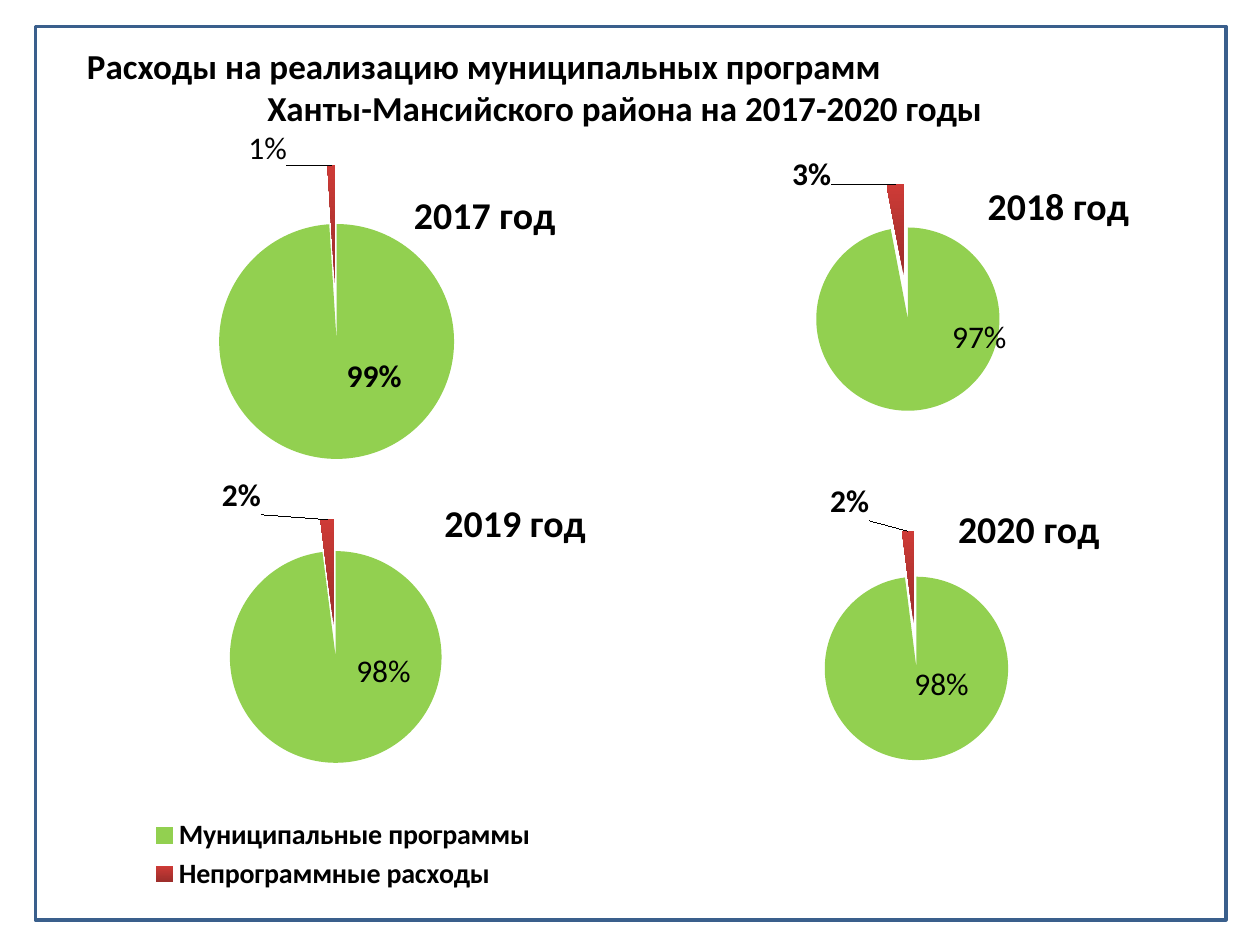
from dataclasses import dataclass

from lxml.etree import SubElement
from pptx import Presentation
from pptx.chart.data import CategoryChartData
from pptx.dml.color import RGBColor
from pptx.enum.chart import XL_CHART_TYPE, XL_LABEL_POSITION, XL_LEGEND_POSITION
from pptx.enum.shapes import MSO_SHAPE
from pptx.enum.text import MSO_ANCHOR, PP_ALIGN
from pptx.oxml.ns import qn
from pptx.util import Inches, Pt


@dataclass(frozen=True)
class Theme:
    font: str = "Calibri"
    ink: str = "000000"
    border: str = "3A5F8C"
    program: str = "92D050"
    other_dark: str = "9B2D2A"
    other_light: str = "CE3B37"
    heading_size: float = 20
    chart_title_size: float = 21.6
    label_size: float = 18
    legend_size: float = 16


@dataclass(frozen=True)
class YearPie:
    year: int
    shares: tuple
    area: tuple
    plot: tuple
    title_at: tuple
    label_shifts: tuple
    bold_labels: tuple = (False, True)
    explosion: int = 25
    legend: tuple = ()


CATEGORIES = ("Муниципальные программы", "Непрограммные расходы")
HEADING = (
    ("Расходы на реализацию муниципальных программ", PP_ALIGN.LEFT),
    ("Ханты-Мансийского района на 2017-2020 годы", PP_ALIGN.CENTER),
)
PIES = (
    YearPie(2017, (99, 1), (10.6, 8.4, 47.2, 31.5), (0, 0.15, 0.68, 0.74),
            (0.46, 0.19), ((0.06, -0.06), (-0.11, -0.19)), bold_labels=(True, False)),
    YearPie(2019, (98, 2), (4.3, 37.5, 44.1, 33.9), (0.13, 0.11, 0.75, 0.57),
            (0.69, 0.04), ((0.08, -0.09), (-0.16, -0.18)), explosion=15,
            legend=(0.15, 0.8, 0.74, 0.19)),
    YearPie(2020, (98, 2), (50.8, 35.9, 44.1, 26), (0.02, 0.24, 0.95, 0.7),
            (0.56, 0.13), ((0.04, -0.09), (-0.11, -0.23))),
    YearPie(2018, (97, 3), (51.6, 11.5, 41, 22), (0.12, 0.14, 0.75, 0.82),
            (0.64, 0.1), ((0.13, -0.1), (-0.17, -0.2)), explosion=24),
)


class SlideBuilder:
    columns, rows = 100, 75

    def __init__(self, deck, theme):
        self.deck = deck
        self.theme = theme
        self.slide = deck.slides.add_slide(deck.slide_layouts[5])

    def place(self, area):
        column = self.deck.slide_width / self.columns
        row = self.deck.slide_height / self.rows
        return [round(length * unit) for length, unit in zip(area, (column, row) * 2)]

    def style(self, font, size, bold=False):
        font.name = self.theme.font
        font.size = Pt(size)
        font.bold = bold
        font.color.rgb = RGBColor.from_string(self.theme.ink)

    def frame(self, area):
        box = self.slide.shapes.add_shape(MSO_SHAPE.RECTANGLE, *self.place(area))
        box.shadow.inherit = False
        box.fill.background()
        box.line.color.rgb = RGBColor.from_string(self.theme.border)
        box.line.width = Pt(2)

    def heading(self, area, lines):
        title = self.slide.shapes.title
        title.left, title.top, title.width, title.height = self.place(area)
        text_frame = title.text_frame
        text_frame.word_wrap = True
        text_frame.vertical_anchor = MSO_ANCHOR.MIDDLE
        text_frame.text = "\n".join(text for text, _ in lines)
        for para, (_, alignment) in zip(text_frame.paragraphs, lines):
            para.alignment = alignment
            para.space_before = Pt(0)
            for span in para.runs:
                self.style(span.font, self.theme.heading_size, True)

    def arrange(self, element, index, values, edge=True, inner=False):
        for previous in element.findall(qn("c:layout")):
            element.remove(previous)
        layout = element.makeelement(qn("c:layout"))
        element.insert(index, layout)
        manual = SubElement(layout, qn("c:manualLayout"))
        settings = [("layoutTarget", "inner")] if inner else []
        if edge:
            settings += [("xMode", "edge"), ("yMode", "edge")]
        settings += zip("xywh", values)
        for name, value in settings:
            SubElement(manual, qn(f"c:{name}")).set("val", str(value))

    def color_slices(self, series):
        program, other = (series.points[index].format.fill for index in range(2))
        program.solid()
        program.fore_color.rgb = RGBColor.from_string(self.theme.program)
        other.gradient()
        other.gradient_angle = 90
        colors = (self.theme.other_dark, self.theme.other_light)
        for stop, color in zip(other.gradient_stops, colors):
            stop.color.rgb = RGBColor.from_string(color)

    def label_slices(self, series, pie):
        labels = series.data_labels
        labels.show_percentage = True
        labels.show_value = False
        labels.number_format = "0%"
        labels.number_format_is_linked = False
        labels.position = XL_LABEL_POSITION.CENTER
        self.style(labels.font, self.theme.label_size)
        for index, bold in enumerate(pie.bold_labels):
            label = series.points[index].data_label
            self.style(label.font, self.theme.label_size, bold)
            label.position = XL_LABEL_POSITION.CENTER
        for element, shift in zip(series._element.iter(qn("c:dLbl")), pie.label_shifts):
            element.find(qn("c:showVal")).set("val", "0")
            element.find(qn("c:showPercent")).set("val", "1")
            self.arrange(element, 1, shift, edge=False)

    def pie_chart(self, pie):
        name = f"{pie.year} год"
        data = CategoryChartData(number_format="General")
        data.categories = CATEGORIES
        data.add_series(name, pie.shares)
        chart = self.slide.shapes.add_chart(
            XL_CHART_TYPE.PIE, *self.place(pie.area), data).chart
        self.style(chart.font, self.theme.label_size)
        chart.has_title = True
        chart.chart_title.text_frame.text = name
        span = chart.chart_title.text_frame.paragraphs[0].runs[0]
        self.style(span.font, self.theme.chart_title_size, True)
        self.arrange(chart.chart_title._element, 1, pie.title_at)
        plot_area = chart._chartSpace.find(f".//{qn('c:plotArea')}")
        self.arrange(plot_area, 0, pie.plot, inner=True)

        plot = chart.plots[0]
        plot.vary_by_categories = True
        series = plot.series[0]
        self.color_slices(series)
        explosion = series._element.makeelement(qn("c:explosion"))
        explosion.set("val", str(pie.explosion))
        series._element.find(qn("c:dPt")).addprevious(explosion)
        self.label_slices(series, pie)

        chart.has_legend = bool(pie.legend)
        if pie.legend:
            chart.legend.position = XL_LEGEND_POSITION.BOTTOM
            chart.legend.include_in_layout = False
            self.style(chart.legend.font, self.theme.legend_size, True)
            self.arrange(chart.legend._element, 1, pie.legend)


def main():
    deck = Presentation()
    deck.slide_width, deck.slide_height = Inches(10), Inches(7.5)
    builder = SlideBuilder(deck, Theme())
    builder.frame((2.8, 2.1, 94.5, 70.9))
    builder.heading((5.9, 2.9, 87.4, 7.9), HEADING)
    for pie in PIES:
        builder.pie_chart(pie)
    deck.save("out.pptx")


if __name__ == "__main__":
    main()
